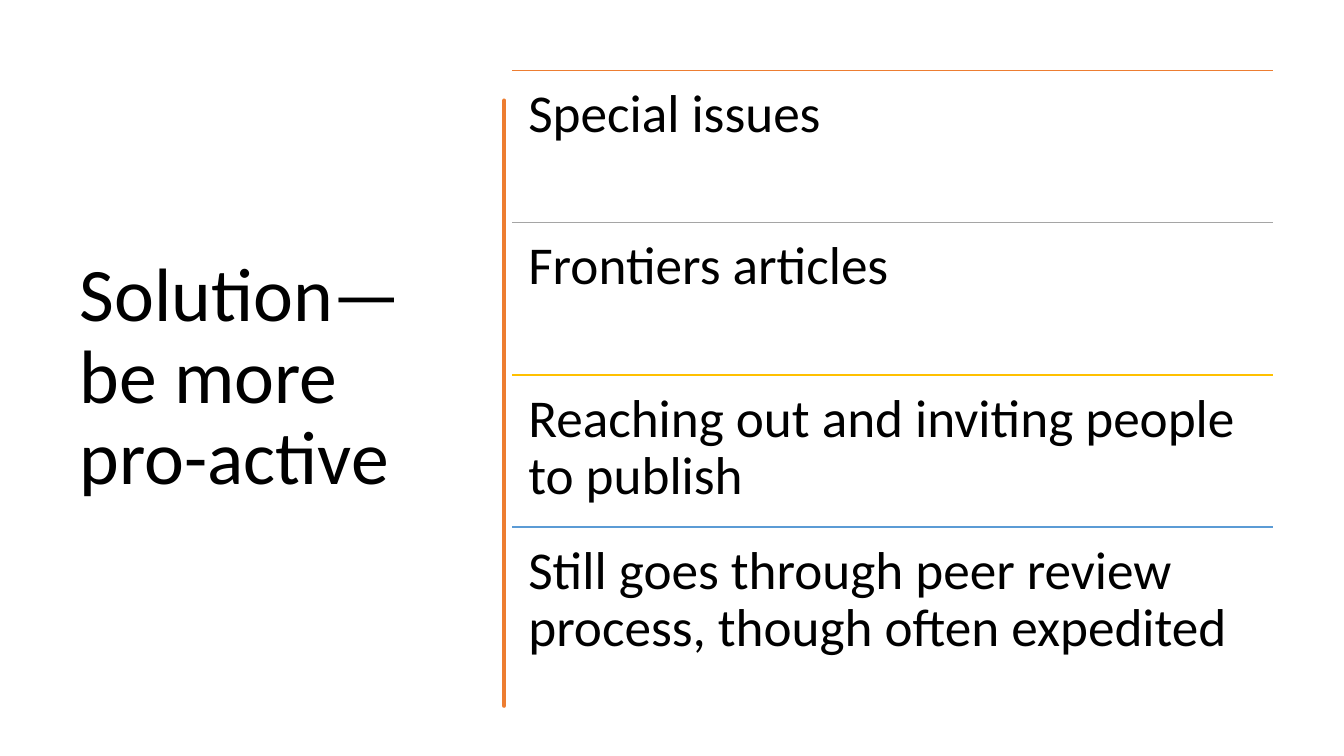
"""Build a slide with a title, a brushed divider and four ruled statements."""
from lxml.etree import SubElement
from pptx import Presentation
from pptx.dml.color import RGBColor
from pptx.enum.shapes import MSO_CONNECTOR as Connector
from pptx.enum.text import MSO_ANCHOR as Anchor, MSO_AUTO_SIZE as AutoSize, PP_ALIGN as Align
from pptx.oxml.ns import qn
from pptx.util import Inches, Pt

THEME = {
    "font": "Calibri",
    "text": "000000",
    "brush": "ED7D31",
    "title_size": 54,
    "statement_size": 38,
    "rule_width": 1,
    "brush_width": 3.25,
}
STATEMENTS = [
    ("Special issues", "ED7D31"),
    ("Frontiers articles", "A5A5A5"),
    ("Reaching out and inviting people to publish", "FFC000"),
    ("Still goes through peer review process, though often expedited", "5B9BD5"),
]
TOP, ROW_HEIGHT = 0.7, 1.51
COLUMN_LEFT, COLUMN_WIDTH = 5.08, 7.55
PADDING = 0.16
BRUSH_RIGHT = [
    (4.75, 0.84), (4.76, 1.2), (4.75, 1.52), (4.76, 1.8), (4.75, 2.26),
    (4.75, 2.94), (4.76, 3.33), (4.75, 3.62), (4.76, 3.97), (4.74, 4.36),
    (4.73, 4.7), (4.75, 5.1), (4.76, 5.45), (4.75, 5.84), (4.75, 6.76),
]
BRUSH_LEFT = [
    (4.73, 6.76), (4.72, 6.4), (4.73, 6.13), (4.73, 5.75), (4.72, 5.3),
    (4.73, 4.77), (4.72, 4.5), (4.73, 4.15), (4.72, 3.65), (4.73, 3.35),
    (4.72, 2.85), (4.73, 2.5), (4.73, 1.95), (4.71, 1.7), (4.73, 1.2),
    (4.73, 0.84),
]


def write(frame, wording, size):
    frame.word_wrap = True
    frame.auto_size = AutoSize.NONE
    frame.text = wording
    paragraph = frame.paragraphs[0]
    paragraph.alignment = Align.LEFT
    paragraph.line_spacing = 0.9
    font = paragraph.runs[0].font
    font.name = THEME["font"]
    font.size = Pt(size)
    font.color.rgb = RGBColor.from_string(THEME["text"])


deck = Presentation()
deck.slide_width, deck.slide_height = Inches(13.33), Inches(7.5)
slide = deck.slides.add_slide(deck.slide_layouts[5])

title = slide.shapes.title
title.left, title.top = Inches(0.69), Inches(TOP)
title.width, title.height = Inches(3.74), Inches(6.11)
write(title.text_frame, "Solution—be more pro-active", THEME["title_size"])
title.text_frame.vertical_anchor = Anchor.MIDDLE

outline = slide.shapes.build_freeform(*BRUSH_RIGHT[0], scale=Inches(1))
outline.add_line_segments(BRUSH_RIGHT[1:] + BRUSH_LEFT, close=True)
brush = outline.convert_to_shape()
brush.shadow.inherit = False
brush.fill.solid()
brush.fill.fore_color.rgb = RGBColor.from_string(THEME["brush"])
brush.line.color.rgb = RGBColor.from_string(THEME["brush"])
brush.line.width = Pt(THEME["brush_width"])

left, width = Inches(COLUMN_LEFT), Inches(COLUMN_WIDTH)
for row, (wording, color) in enumerate(STATEMENTS):
    top = Inches(TOP + row * ROW_HEIGHT)
    rule = slide.shapes.add_connector(Connector.STRAIGHT, left, top, left + width, top)
    rule.line.color.rgb = RGBColor.from_string(color)
    rule.line.width = Pt(THEME["rule_width"])
    SubElement(rule.element.spPr, qn("a:effectLst"))

    statement = slide.shapes.add_textbox(left, top, width, Inches(ROW_HEIGHT)).text_frame
    statement.margin_left = statement.margin_right = Inches(PADDING)
    statement.margin_top = statement.margin_bottom = Inches(PADDING)
    write(statement, wording, THEME["statement_size"])

deck.save("out.pptx")
